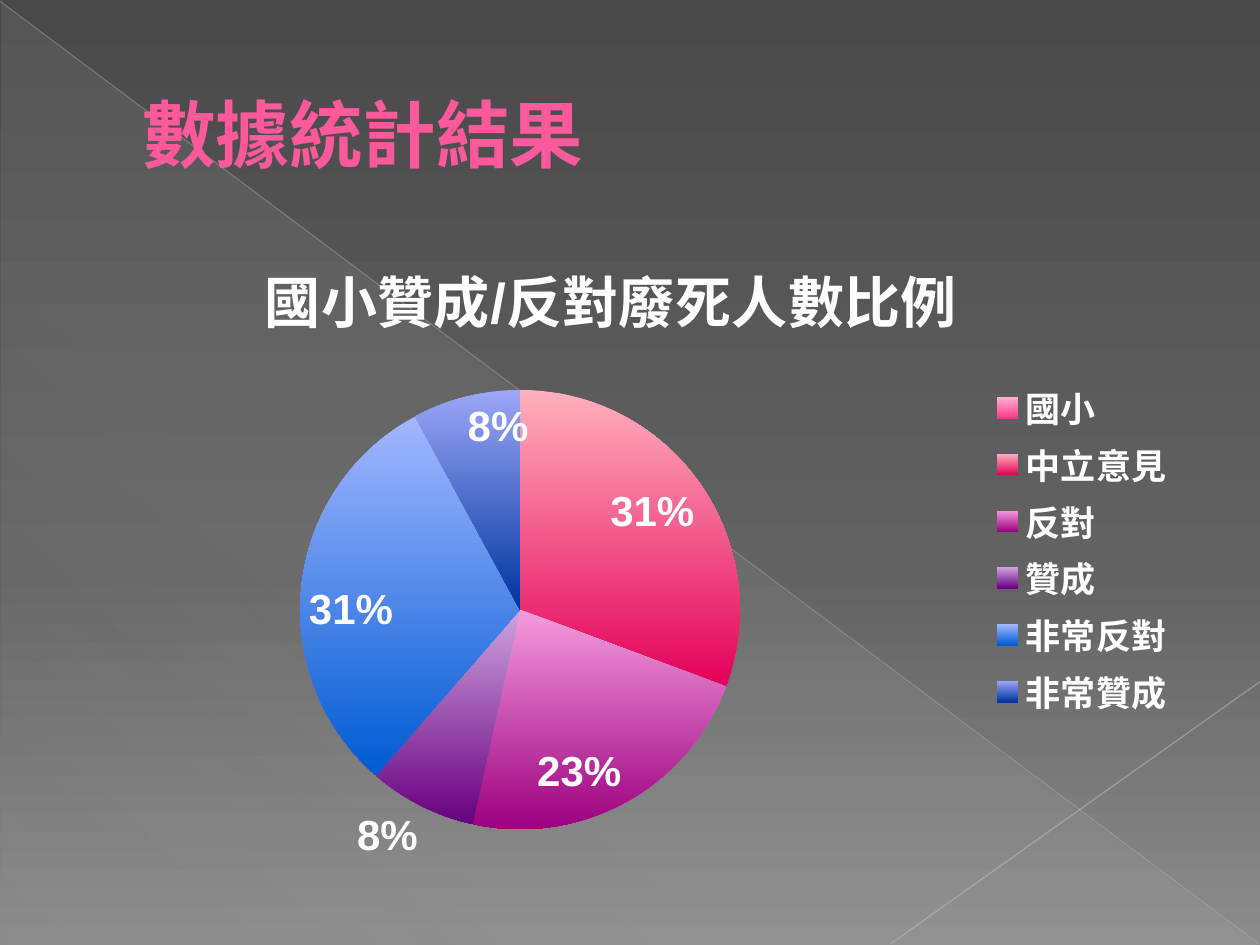
from copy import deepcopy

from lxml import etree
from pptx import Presentation
from pptx.chart.data import CategoryChartData
from pptx.dml.color import RGBColor
from pptx.enum.chart import XL_CHART_TYPE, XL_LABEL_POSITION, XL_LEGEND_POSITION
from pptx.enum.shapes import MSO_CONNECTOR, MSO_SHAPE
from pptx.enum.text import MSO_ANCHOR
from pptx.oxml import parse_xml
from pptx.oxml.ns import nsdecls, qn
from pptx.util import Inches, Pt

PIE = XL_CHART_TYPE.PIE
INSIDE = XL_LABEL_POSITION.INSIDE_END
OUTSIDE = XL_LABEL_POSITION.OUTSIDE_END
RIGHT = XL_LEGEND_POSITION.RIGHT
STRAIGHT = MSO_CONNECTOR.STRAIGHT
TRIANGLE = MSO_SHAPE.RIGHT_TRIANGLE
MIDDLE = MSO_ANCHOR.MIDDLE

WHITE = "FFFFFF"
SLICES = [
    ("國小", None, "FFB0CD", "FF388C"),
    ("中立意見", 31, "FFB0BC", "E40059"),
    ("反對", 23, "F49CDC", "9C007F"),
    ("贊成", 8, "CCA4DE", "68007F"),
    ("非常反對", 31, "A3B6FF", "005BD3"),
    ("非常贊成", 8, "9CA6F6", "00349E"),
]
OUTSIDE_SLICE = 3


def color(value):
    """Turn a hex string into a colour."""
    return RGBColor.from_string(value)


def set_font(font, size, value, name="Arial"):
    """Apply a bold text style."""
    style = {"size": Pt(size), "bold": True, "name": name}
    for key, setting in style.items():
        setattr(font, key, setting)
    font.color.rgb = color(value)


def set_opacity(element, percent):
    """Give a colour element an opacity."""
    etree.SubElement(element, qn("a:alpha"), val=str(percent * 1000))


def paint_gradient(fill, owner, stops, angle=90):
    """Fill with (position, colour, opacity) stops at a clockwise angle."""
    fill.gradient()
    fill.gradient_angle = 360 - angle
    stop_list = list(owner.iter(qn("a:gsLst")))[-1]
    for _ in stops[2:]:
        stop_list.append(deepcopy(stop_list[-1]))
    for stop, (position, value, opacity) in zip(fill.gradient_stops, stops):
        stop.position = position
        stop.color.rgb = color(value)
    for element, (_, _, opacity) in zip(stop_list, stops):
        if opacity < 100:
            set_opacity(element[0], opacity)


def set_layout(parent, x, y, width=None, height=None, inner=False):
    """Place a chart part by fractions of the chart area."""
    for old in parent.findall(qn("c:layout")):
        parent.remove(old)
    layout = parse_xml(f"<c:layout {nsdecls('c')}><c:manualLayout/></c:layout>")
    settings = {"layoutTarget": "inner" if inner else None, "xMode": "edge",
                "yMode": "edge", "x": x, "y": y, "w": width, "h": height}
    for key, value in settings.items():
        if value is not None:
            etree.SubElement(layout[0], qn(f"c:{key}"), val=str(value))
    before = {"plotArea": 0, "legend": 1, "title": 1}
    parent.insert(before[etree.QName(parent).localname], layout)


def add_backdrop(page):
    """Draw the gradient background, the pale triangle and the thin lines."""
    paint_gradient(page.background.fill, page.element,
                   [(0, "494949", 100), (0.6, "626262", 100), (1, "8B8B8B", 100)])
    box = [Inches(length) for length in (0.01, 0.02, 9.98, 7.48)]
    triangle = page.shapes.add_shape(TRIANGLE, *box)
    triangle.shadow.inherit = False
    triangle.line.fill.background()
    paint_gradient(triangle.fill, triangle.element,
                   [(0, "D2D2D2", 10), (0.7, "D2D2D2", 8), (1, "D2D2D2", 1)], 133)
    lines = [((0, 0.01, 9.99, 7.49), "BEBEBE", 35),
             ((10, 5.41, 7.07, 7.49), "C5C5C5", 45)]
    for ends, value, opacity in lines:
        line = page.shapes.add_connector(STRAIGHT, *map(Inches, ends))
        line.line.width = Pt(0.75)
        line.line.color.rgb = color(value)
        properties = line.element.spPr
        set_opacity(next(properties.iter(qn("a:srgbClr"))), opacity)
        etree.SubElement(properties, qn("a:effectLst"))


def add_heading(page, box, text):
    """Write the slide heading in its box."""
    frame = page.shapes.add_textbox(*map(Inches, box)).text_frame
    margins = ("margin_left", "margin_top", "margin_right", "margin_bottom")
    settings = {"word_wrap": True, "vertical_anchor": MIDDLE}
    settings.update(dict.fromkeys(margins, Inches(0.1)))
    for key, value in settings.items():
        setattr(frame, key, value)
    para = frame.paragraphs[0]
    para._p.get_or_add_pPr().set("marL", str(Inches(0.53)))
    span = para.add_run()
    span.text = text
    set_font(span.font, 42, "FF599C", "TeX Gyre Adventor")


def add_pie(page, box, title):
    """Draw the pie chart with its title, legend and percentages."""
    data = CategoryChartData()
    data.categories = [name for name, *_ in SLICES]
    data.add_series("Series 1", [value for _, value, *_ in SLICES])
    chart = page.shapes.add_chart(PIE, *map(Inches, box), data).chart
    chart.font.name = "Arial"
    chart.font.size = Pt(10)

    chart.has_title = True
    para = chart.chart_title.text_frame.paragraphs[0]
    span = para.add_run()
    span.text = title
    set_font(span.font, 32, WHITE)
    chart.chart_title.include_in_layout = False

    chart.has_legend = True
    chart.legend.position = RIGHT
    chart.legend.include_in_layout = False
    set_font(chart.legend.font, 20, WHITE)

    plot = chart.plots[0]
    plot.vary_by_categories = True
    points = plot.series[0].points
    for index, (_, _, light, dark) in enumerate(SLICES):
        paint_gradient(points[index].format.fill, chart.element,
                       [(0, light, 100), (1, dark, 100)])

    labels = plot.series[0].data_labels
    settings = {"show_percentage": True, "show_value": False, "position": INSIDE,
                "number_format": "0%", "number_format_is_linked": False}
    for key, value in settings.items():
        setattr(labels, key, value)
    set_font(labels.font, 24, WHITE)
    label = points[OUTSIDE_SLICE].data_label
    set_font(label.font, 24, WHITE)
    label.position = OUTSIDE
    single = next(chart.element.iter(qn("c:dLbl")))
    single.find(qn("c:showVal")).set("val", "0")
    single.find(qn("c:showPercent")).set("val", "1")

    area = chart.element.chart
    set_layout(area.find(qn("c:title")), 0.18, 0.05)
    set_layout(area.plotArea, 0.22, 0.27, 0.385, 0.647, True)
    set_layout(area.find(qn("c:legend")), 0.82, 0.25, 0.17, 0.51)


def main():
    """Build the slide and save it."""
    deck = Presentation()
    deck.slide_width, deck.slide_height = Inches(10), Inches(7.5)
    page = deck.slides.add_slide(deck.slide_layouts[6])
    add_backdrop(page)
    add_heading(page, (0.5, 0.29, 9, 1.53), "數據統計結果")
    add_pie(page, (0.39, 1.64, 9.06, 5.39), "國小贊成/反對廢死人數比例")
    deck.save("out.pptx")


if __name__ == "__main__":
    main()
